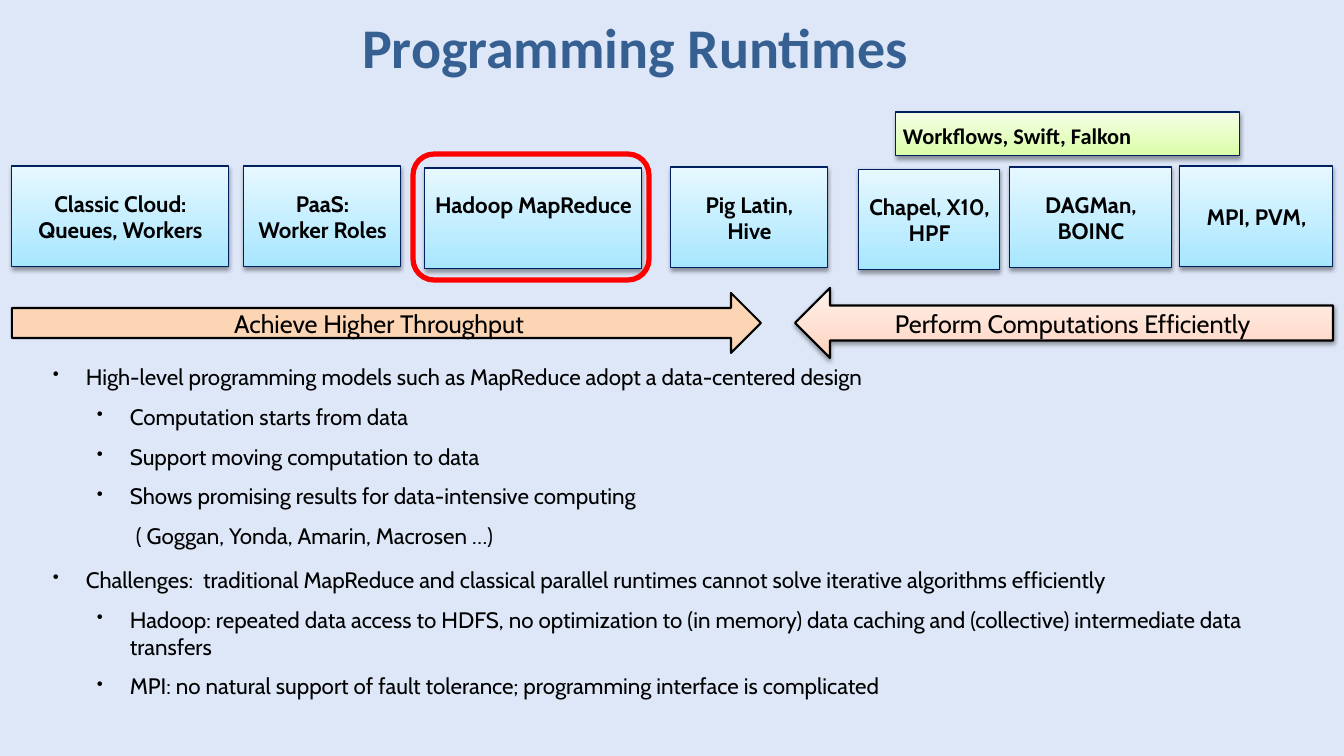
from lxml import etree
from pptx import Presentation
from pptx import util as u
from pptx.dml.color import RGBColor
from pptx.enum import shapes, text
from pptx.oxml import ns

PX = u.Inches(1) / 100.8
KIND = shapes.MSO_SHAPE
ALIGN = text.PP_ALIGN
colour = RGBColor.from_string


def style_text(paragraph, font_name, size, bold=False, hex_colour="000000"):
    for run in paragraph.runs:
        run.font.name = font_name
        run.font.size = u.Pt(size)
        run.font.bold = bold
        run.font.color.rgb = colour(hex_colour)


def add_block(kind, bounds, label, fills, line, width, size=16, bold=True,
              font_name="Cabin", align=ALIGN.CENTER):
    shape = slide.shapes.add_shape(kind, *[int(v * PX) for v in bounds])
    shape.shadow.inherit = False
    shape.line.color.rgb = colour(line)
    shape.line.width = u.Pt(width)
    if len(fills) == 2:
        shape.fill.gradient()
        shape.fill.gradient_angle = 90
        for stop, hex_colour in zip(shape.fill.gradient_stops, fills):
            stop.color.rgb = colour(hex_colour)
        for stop, position in zip(shape.fill.gradient_stops, (0, 1)):
            stop.position = position
        effects = shape._element.spPr.find(ns.qn("a:effectLst"))
        shadow = etree.SubElement(effects, ns.qn("a:outerShdw"), blurRad="40000",
                                  dist="20000", dir="5400000", rotWithShape="0")
        black = etree.SubElement(shadow, ns.qn("a:srgbClr"), val="000000")
        etree.SubElement(black, ns.qn("a:alpha"), val="38000")
    elif fills:
        shape.fill.solid()
        shape.fill.fore_color.rgb = colour(fills[0])
    else:
        shape.fill.background()
    frame = shape.text_frame
    frame.word_wrap = True
    frame.vertical_anchor = text.MSO_ANCHOR.MIDDLE
    if label:
        frame.text = label
        for paragraph in frame.paragraphs:
            paragraph.alignment = align
            style_text(paragraph, font_name, size, bold)
    return shape


presentation = Presentation()
presentation.slide_width = int(1344 * PX)
presentation.slide_height = int(756 * PX)
slide = presentation.slides.add_slide(presentation.slide_layouts[6])
slide.background.fill.solid()
slide.background.fill.fore_color.rgb = colour("DEE7F8")

title = slide.shapes.add_textbox(*[int(v * PX) for v in (30, 0, 1210, 92)])
title.text_frame.word_wrap = True
title.text_frame.vertical_anchor = text.MSO_ANCHOR.MIDDLE
title.text_frame.text = "Programming Runtimes"
title.text_frame.paragraphs[0].alignment = ALIGN.CENTER
style_text(title.text_frame.paragraphs[0], "Calibri", 40, True, "376092")

BLUE = ("A7E6FF", "E7F8FF")
GREEN = ("DAFDA7", "F5FFE7")
PEACH = ("FFD2BD", "FFF2ED")
NAVY = "002060"

runtimes = [
    ("Classic Cloud:\nQueues, Workers", 12, 166, 217),
    ("PaaS:\nWorker Roles", 244, 166, 157),
    ("Hadoop MapReduce", 425, 168, 217),
    ("Pig Latin,\nHive", 671, 167, 157),
    ("Chapel, X10,\nHPF", 859, 169, 141),
    ("DAGMan,\nBOINC", 1010, 167, 162),
    ("MPI, PVM,", 1180, 166, 153),
]
for label, left, top, width in runtimes:
    block = add_block(KIND.RECTANGLE, (left, top, width, 101), label, BLUE, NAVY, 0.75)
    if label == "Hadoop MapReduce":
        block.text_frame.margin_left = block.text_frame.margin_right = int(5 * PX)
        block.text_frame.margin_bottom = int(32 * PX)

add_block(KIND.ROUNDED_RECTANGLE, (413, 154, 236, 126), "", (), "FF0000", 3.75)
workflows = add_block(KIND.RECTANGLE, (896, 112, 344, 44), "Workflows, Swift, Falkon",
                      GREEN, NAVY, 0.75, font_name="Calibri", align=ALIGN.LEFT)
workflows.text_frame.margin_left = int(7 * PX)
workflows.text_frame.margin_top = int(9 * PX)

add_block(KIND.LEFT_ARROW, (795, 288, 538, 70), "Perform Computations Efficiently",
          PEACH, "000000", 1.5, 18, False)
add_block(KIND.RIGHT_ARROW, (12, 293, 749, 60), "Achieve Higher Throughput",
          ("FCD5B5",), "000000", 1.5, 18, False)

points = [
    (0, "High-level programming models such as MapReduce adopt a data-centered design"),
    (1, "Computation starts from data"),
    (1, "Support moving computation to data"),
    (1, "Shows promising results for data-intensive computing"),
    (2, "( Goggan, Yonda, Amarin, Macrosen …)"),
    (0, "Challenges:  traditional MapReduce and classical parallel runtimes "
        "cannot solve iterative algorithms efficiently"),
    (1, "Hadoop: repeated data access to HDFS, no optimization to (in memory) "
        "data caching and (collective) intermediate data transfers"),
    (1, "MPI: no natural support of fault tolerance; programming interface is complicated"),
]
INDENTS = [(76, -33), (120, -33), (126, 0)]
body = slide.shapes.add_textbox(*[int(v * PX) for v in (0, 361, 1257, 350)])
body.text_frame.word_wrap = True
body.text_frame.text = "\n".join(label for _, label in points)
for (level, _), paragraph in zip(points, body.text_frame.paragraphs):
    margin, indent = INDENTS[level]
    properties = paragraph._p.get_or_add_pPr()
    properties.set("marL", str(int(margin * PX)))
    properties.set("indent", str(int(indent * PX)))
    if level < 2:
        etree.SubElement(properties, ns.qn("a:buSzPct"), val="80000")
        etree.SubElement(properties, ns.qn("a:buChar"), char="•")
    paragraph.level = min(level, 1)
    paragraph.space_before = u.Pt(3.2 if level else 6)
    paragraph.space_after = u.Pt(6)
    style_text(paragraph, "Cabin", 16)
body.text_frame.paragraphs[0].space_before = u.Pt(0)
body.text_frame.paragraphs[0].line_spacing = 0.9

presentation.save("out.pptx")
